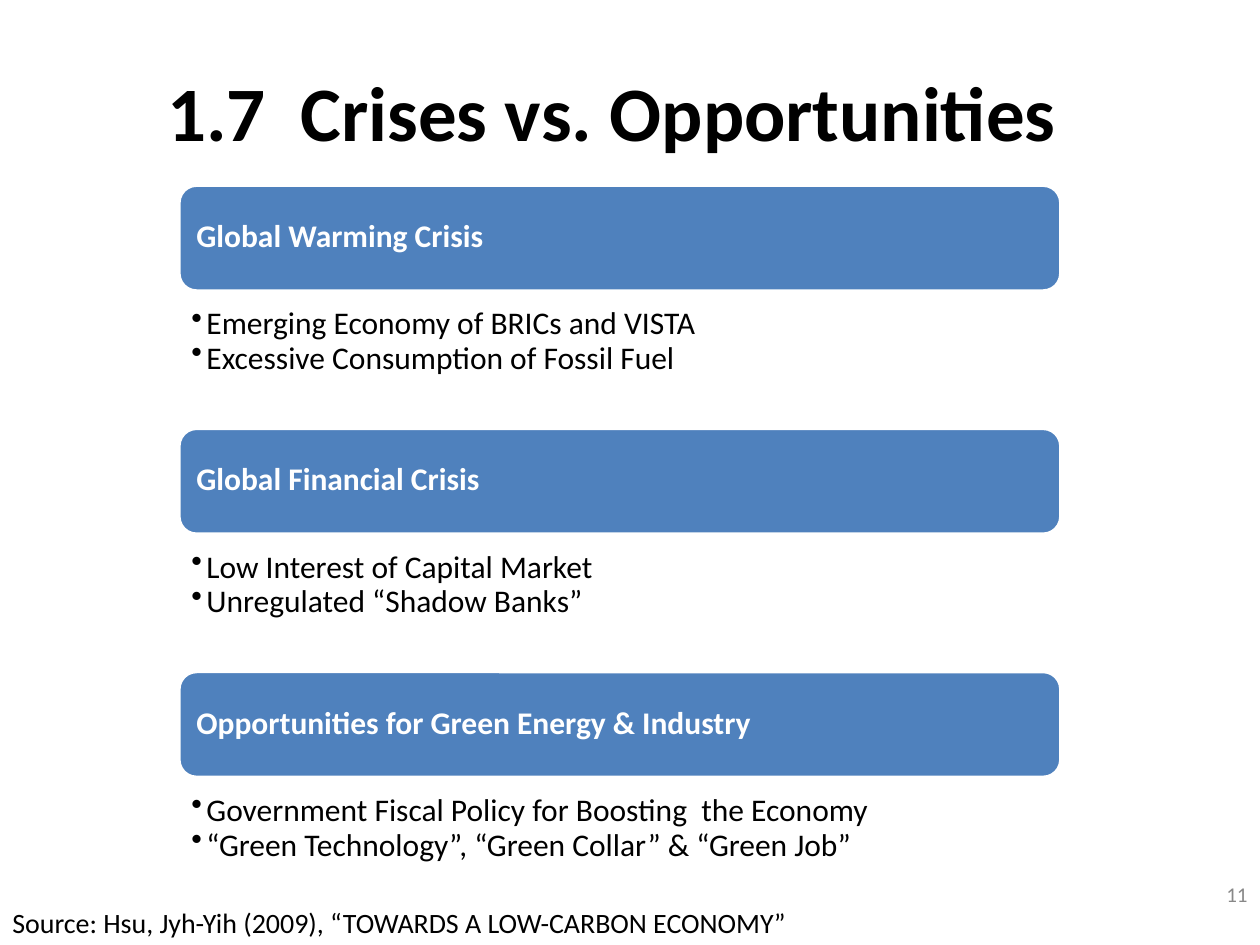
from lxml import etree
from pptx import Presentation
from pptx import util as u
from pptx.dml.color import RGBColor
from pptx.enum import shapes, text
from pptx.oxml.ns import qn

BLACK, WHITE, BLUE, GRAY = "000000", "FFFFFF", "4F81BD", "888888"
LEFT, WIDTH, HEIGHT = 1.42, 7, 0.84
FIRST_TOP, ROW_STEP, LIST_OFFSET = 1.47, 1.93, 0.96

SECTIONS = [
    ("Global Warming Crisis",
     ["Emerging Economy of BRICs and VISTA",
      "Excessive Consumption of Fossil Fuel"]),
    ("Global Financial Crisis",
     ["Low Interest of Capital Market",
      "Unregulated “Shadow Banks”"]),
    ("Opportunities for Green Energy & Industry",
     ["Government Fiscal Policy for Boosting  the Economy",
      "“Green Technology”, “Green Collar” & “Green Job”"]),
]


def color(value):
    return RGBColor.from_string(value)


def write(paragraph, words, size=18, fill=BLACK, bold=False,
          align=text.PP_ALIGN.LEFT, spacing=None, before=None):
    paragraph.alignment = align
    paragraph.line_spacing = spacing
    if before is not None:
        paragraph.space_before = u.Pt(before)
    run = paragraph.add_run()
    run.text = words
    run.font.name = "Calibri"
    run.font.size = u.Pt(size)
    run.font.bold = bold
    run.font.color.rgb = color(fill)


def add_bullet(paragraph, indent=0.12):
    properties = paragraph._p.get_or_add_pPr()
    properties.set("marL", str(u.Inches(indent)))
    properties.set("indent", str(-u.Inches(indent)))
    bullet_color = etree.SubElement(properties, qn("a:buClr"))
    etree.SubElement(bullet_color, qn("a:srgbClr")).set("val", BLACK)
    etree.SubElement(properties, qn("a:buChar")).set("char", "•")


class SlideBuilder:
    def __init__(self, slide):
        self.slide = slide

    def title(self, words):
        shape = self.slide.shapes.title
        shape.left, shape.top = u.Inches(0.5), u.Inches(0.3)
        shape.width, shape.height = u.Inches(9), u.Inches(1.25)
        frame = shape.text_frame
        frame.vertical_anchor = text.MSO_ANCHOR.MIDDLE
        frame.margin_right = u.Inches(0.38)
        write(frame.paragraphs[0], words, size=44, bold=True,
              align=text.PP_ALIGN.CENTER, spacing=0.9)

    def text_frame(self, left, top, width, height,
                   anchor=text.MSO_ANCHOR.TOP):
        box = self.slide.shapes.add_textbox(
            u.Inches(left), u.Inches(top), u.Inches(width), u.Inches(height))
        frame = box.text_frame
        frame.word_wrap = True
        frame.vertical_anchor = anchor
        return frame

    def label(self, words, left, top, width, height,
              anchor=text.MSO_ANCHOR.TOP, **style):
        frame = self.text_frame(left, top, width, height, anchor)
        write(frame.paragraphs[0], words, **style)

    def heading_bar(self, words, top):
        shape = self.slide.shapes.add_shape(
            shapes.MSO_SHAPE.ROUNDED_RECTANGLE, u.Inches(LEFT),
            u.Inches(top), u.Inches(WIDTH), u.Inches(HEIGHT))
        shape.shadow.inherit = False
        shape.fill.solid()
        shape.fill.fore_color.rgb = color(BLUE)
        shape.line.color.rgb = color(WHITE)
        shape.line.width = u.Pt(2)
        shape.text_frame.vertical_anchor = text.MSO_ANCHOR.MIDDLE
        write(shape.text_frame.paragraphs[0], words, fill=WHITE, bold=True,
              spacing=0.85)

    def bullet_list(self, items, top):
        frame = self.text_frame(LEFT, top, WIDTH, HEIGHT)
        for index, item in enumerate(items):
            paragraph = frame.add_paragraph() if index else frame.paragraphs[0]
            paragraph.level = 1
            add_bullet(paragraph)
            write(paragraph, item, spacing=0.75, before=3.6 if index else 0)


def main():
    presentation = Presentation()
    presentation.slide_width = u.Inches(10)
    presentation.slide_height = u.Inches(7.5)
    title_only = presentation.slide_layouts[5]
    builder = SlideBuilder(presentation.slides.add_slide(title_only))

    builder.title("1.7  Crises vs. Opportunities")
    for row, (heading, items) in enumerate(SECTIONS):
        top = FIRST_TOP + row * ROW_STEP
        builder.heading_bar(heading, top)
        builder.bullet_list(items, top + LIST_OFFSET)
    builder.label("11", 9.49, 6.9, 0.51, 0.4, text.MSO_ANCHOR.MIDDLE,
                  size=12, fill=GRAY, align=text.PP_ALIGN.RIGHT)
    builder.label("Source: Hsu, Jyh-Yih (2009), “TOWARDS A LOW-CARBON ECONOMY”",
                  0, 7.14, 6.44, 0.37, size=16)
    presentation.save("out.pptx")


if __name__ == "__main__":
    main()
